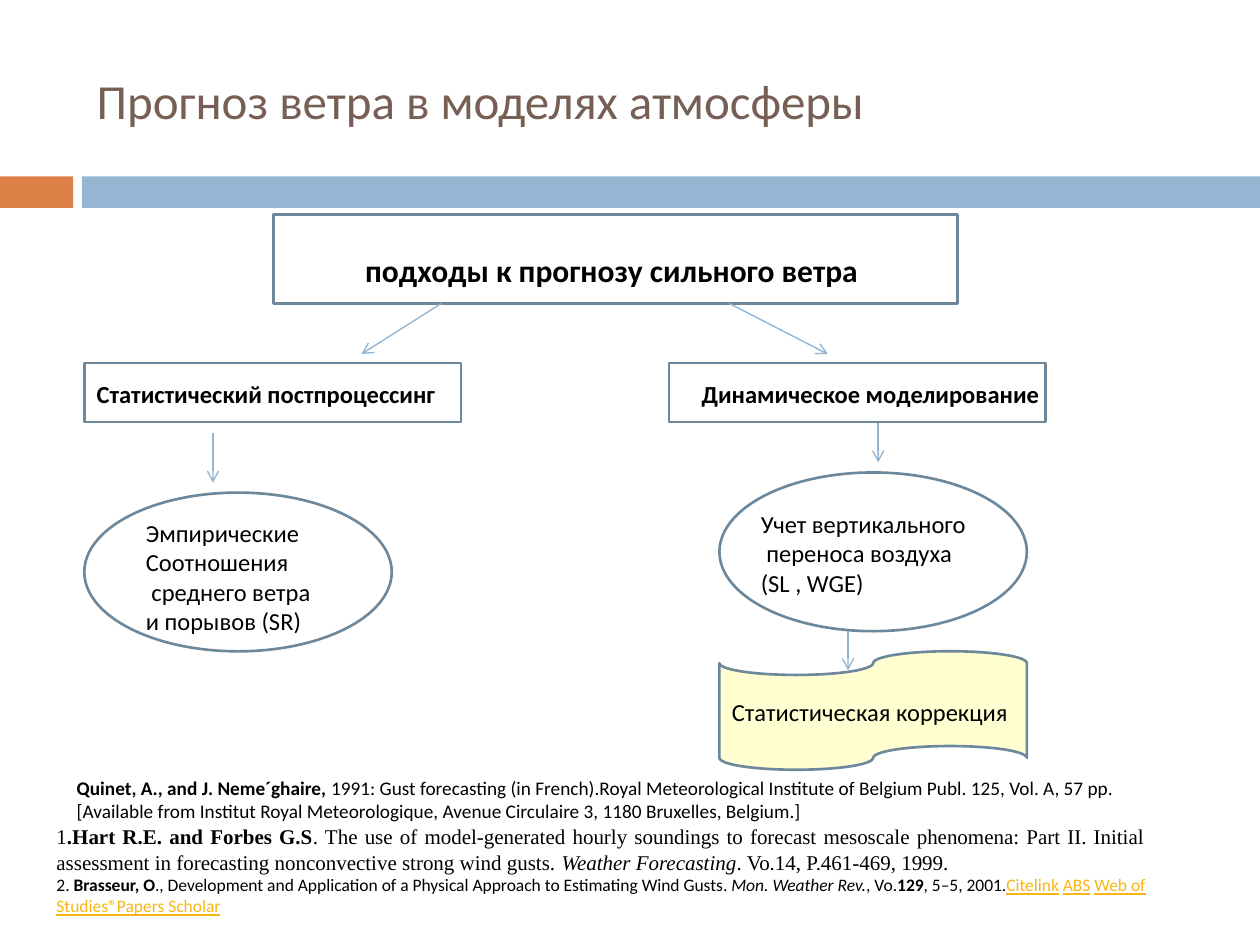
from dataclasses import dataclass

from lxml import etree
from pptx import Presentation
from pptx.dml.color import RGBColor
from pptx.enum.shapes import MSO_CONNECTOR, MSO_SHAPE
from pptx.enum.text import MSO_ANCHOR, MSO_AUTO_SIZE, PP_ALIGN
from pptx.oxml.ns import qn
from pptx.util import Pt

RECTANGLE, OVAL, TAPE = MSO_SHAPE.RECTANGLE, MSO_SHAPE.OVAL, MSO_SHAPE.WAVE
TAPE = MSO_SHAPE.FLOWCHART_PUNCHED_TAPE
STRAIGHT = MSO_CONNECTOR.STRAIGHT
TOP, MIDDLE = MSO_ANCHOR.TOP, MSO_ANCHOR.MIDDLE
LEFT, JUSTIFY = PP_ALIGN.LEFT, PP_ALIGN.JUSTIFY


@dataclass(frozen=True)
class Theme:
    black: str = "000000"
    title: str = "775F55"
    orange: str = "DD8047"
    blue: str = "94B6D2"
    outline: str = "6D879B"
    yellow: str = "FFFF00"
    link: str = "F7B615"
    font: str = "Calibri"
    serif: str = "Times New Roman"
    title_size: float = 28
    heading_size: float = 18
    body_size: float = 14
    serif_size: float = 12
    source_size: float = 11
    small_size: float = 10


theme = Theme()
presentation = Presentation()
presentation.slide_width, presentation.slide_height = Pt(720), Pt(540)
slide = presentation.slides.add_slide(presentation.slide_layouts[6])


def add_text(text, box, size=theme.body_size, color=theme.black, bold=False,
             wrap=False, anchor=TOP, align=LEFT):
    """Text is a string, or a list of paragraphs made of (text, format) runs."""
    shape = slide.shapes.add_textbox(*map(Pt, box))
    frame = shape.text_frame
    frame.word_wrap = wrap
    frame.vertical_anchor = anchor
    frame.auto_size = MSO_AUTO_SIZE.NONE if anchor == MIDDLE else MSO_AUTO_SIZE.SHAPE_TO_FIT_TEXT
    if isinstance(text, str):
        text = [[(line, {})] for line in text.split("\n")]
    for index, runs in enumerate(text):
        paragraph = frame.add_paragraph() if index else frame.paragraphs[0]
        paragraph.alignment = align
        for content, style in runs:
            run = paragraph.add_run()
            run.text = content
            font = run.font
            font.name = style.get("font", theme.font)
            font.size = Pt(style.get("size", size))
            font.bold = style.get("bold", bold)
            font.italic = style.get("italic", False)
            font.underline = style.get("underline", False)
            font.color.rgb = RGBColor.from_string(style.get("color", color))


def add_box(kind, box, fill=None, line=theme.outline):
    shape = slide.shapes.add_shape(kind, *map(Pt, box))
    shape.shadow.inherit = False
    if fill:
        shape.fill.solid()
        shape.fill.fore_color.rgb = RGBColor.from_string(fill)
    else:
        shape.fill.background()
    if line:
        shape.line.color.rgb = RGBColor.from_string(line)
        shape.line.width = Pt(1.5)
    else:
        shape.line.fill.background()
    return shape


# Title and the band below it
add_box(RECTANGLE, (0, 100.8, 41.8, 18), fill=theme.orange, line=None)
add_box(RECTANGLE, (46.8, 100.8, 673.2, 18), fill=theme.blue, line=None)
add_text("Прогноз ветра в моделях атмосферы", (48.2, 18, 642.2, 77.8),
         size=theme.title_size, color=theme.title, wrap=True, anchor=MIDDLE)

# Outlines of the scheme
left_column, right_column, oval_left = 48.2, 382.3, 411.1
add_box(RECTANGLE, (156.2, 122.4, 391, 51.1))
for left in (left_column, right_column):
    add_box(RECTANGLE, (left, 207.4, 215.3, 33.8))
for left, top in ((oval_left, 270), (left_column, 281.5)):
    add_box(OVAL, (left, top, 175.7, 90.7))

# Arrows between the steps
arrows = [
    (252, 173.5, 206.6, 202.3),
    (416.9, 173.5, 473, 202.3),
    (501.8, 241.9, 501.8, 264.2),
    (121.7, 247.7, 121.7, 275.8),
    (484.6, 360.7, 484.6, 383),
]
for ends in arrows:
    arrow = slide.shapes.add_connector(STRAIGHT, *map(Pt, ends))
    arrow.line.color.rgb = RGBColor.from_string(theme.blue)
    arrow.line.width = Pt(0.79)
    etree.SubElement(arrow.line._get_or_add_ln(), qn("a:tailEnd"), type="arrow")
    etree.SubElement(arrow._element.spPr, qn("a:effectLst"))

# Translucent tape for the correction step
tape = add_box(TAPE, (oval_left, 372.2, 175.7, 67.7), fill=theme.yellow)
tape_color = tape._element.spPr.find(qn("a:solidFill"))[0]
etree.SubElement(tape_color, qn("a:alpha"), val="18000")

# Labels of the scheme
add_text("подходы к прогнозу сильного ветра", (201.6, 139.7, 298.1, 28.8),
         size=theme.heading_size, bold=True)
add_text("Статистический постпроцессинг", (left_column, 213.1, 221, 24.5),
         bold=True, wrap=True)
add_text("Динамическое моделирование", (393.8, 213.1, 208.1, 24.5), bold=True)
add_text("Эмпирические\nСоотношения\n среднего ветра\nи порывов (SR)",
         (76.3, 292.3, 112.3, 74.9))
add_text("Учет вертикального\n переноса воздуха\n(SL , WGE)",
         (427.7, 287.3, 132.5, 58.3))
add_text("Статистическая коррекция", (oval_left, 394.6, 173.5, 24.5))

# References
bold, italic = {"bold": True}, {"italic": True}
link = {"color": theme.link, "underline": True}
serif = {"font": theme.serif, "size": theme.serif_size}
add_text([[
    ("Quinet, A., and J. Neme´ghaire, ", bold),
    ("1991: Gust forecasting (in French).Royal Meteorological Institute of Belgium "
     "Publ. 125, Vol. A, 57 pp. [Available from Institut Royal Meteorologique, "
     "Avenue Circulaire 3, 1180 Bruxelles, Belgium.]", {}),
]], (36.7, 439.9, 635, 33.8), size=theme.source_size, wrap=True)
add_text([
    [
        ("1", serif),
        (".Hart R.E. and Forbes G.S", serif | bold),
        (". The use of model-generated hourly soundings to forecast mesoscale "
         "phenomena: Part II. Initial assessment in forecasting nonconvective "
         "strong wind gusts. ", serif),
        ("Weather Forecasting", serif | italic),
        (". Vo.14, P.461-469, 1999.", serif),
    ],
    [
        ("2. ", {}),
        ("Brasseur, O", bold),
        ("., Development and Application of a Physical Approach to Estimating "
         "Wind Gusts. ", {}),
        ("Mon. Weather Rev.", italic),
        (", Vo.", {}),
        ("129", bold),
        (", 5–5, 2001.", {}),
        ("Citelink", link),
        (" ", {}),
        ("ABS", link),
        (" ", {}),
        ("Web of Studies®Papers Scholar", link),
    ],
], (25.2, 467.3, 636.5, 72.7), size=theme.small_size, wrap=True, align=JUSTIFY)

presentation.save("out.pptx")
